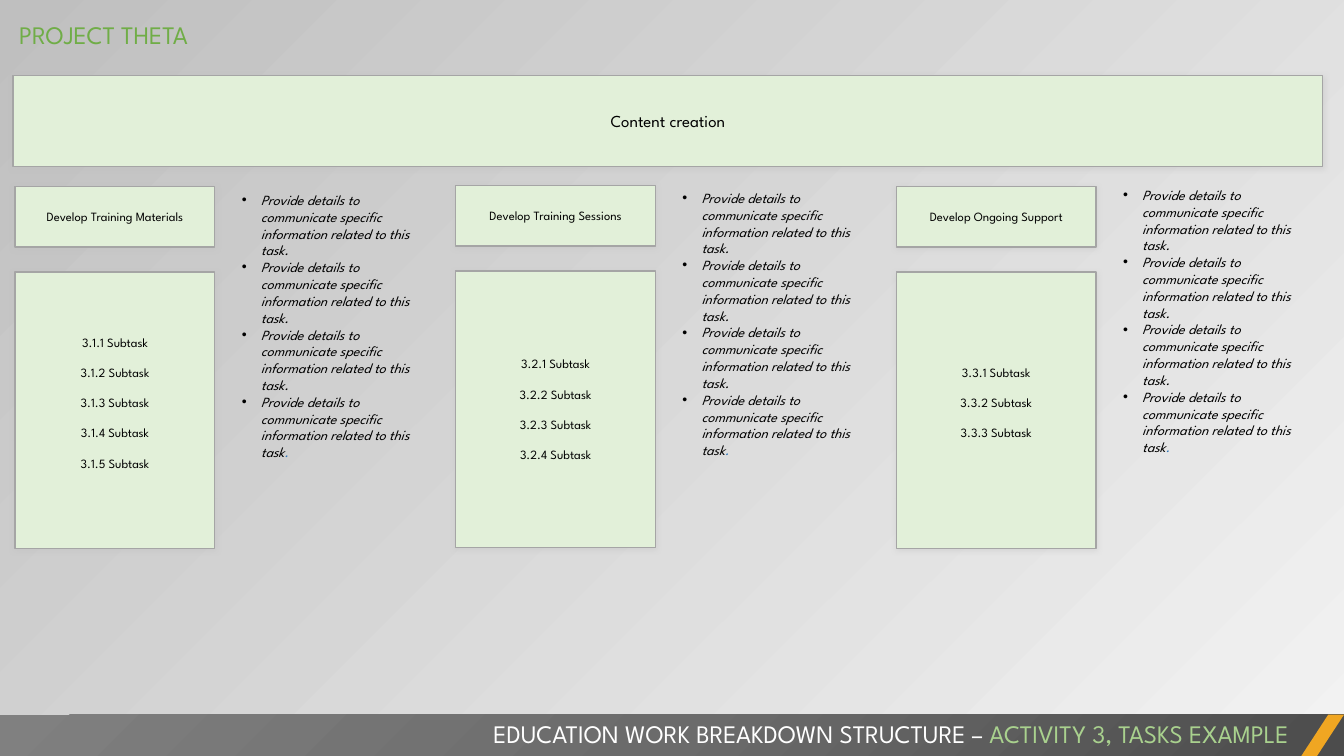
from lxml.etree import SubElement
from pptx import Presentation
from pptx.dml.color import RGBColor
from pptx.enum.shapes import MSO_SHAPE
from pptx.enum.text import MSO_ANCHOR, MSO_AUTO_SIZE, PP_ALIGN
from pptx.oxml import parse_xml
from pptx.oxml.ns import nsdecls, qn
from pptx.util import Inches, Pt

COLORS = {
    "box": "E2F0D9", "edge": "A5A5A5", "shadow": "BFBFBF", "ink": "000000",
    "title": "70AD47", "accent": "A9D18E", "white": "FFFFFF", "stop": "2E75B6",
    "slash": "F0A622", "light": "F2F2F2", "grey": "BFBFBF",
}
WIDTH, HEIGHT = 13.33, 7.5
COLUMN_LEFT, COLUMN_STEP, BOX_WIDTH = 0.15, 4.37, 1.98
DETAIL_OFFSET, DETAIL_WIDTH = 2.15, 2.06
BAR_TOP, BAR_HEIGHT = 7.09, 0.42
DETAIL = "Provide details to communicate specific information related to this task"

# Task, number of subtasks, top of the boxes, top of the details, space below subtasks
TASKS = [
    ("Develop Training Materials", 5, 1.85, 1.85, 0.2),
    ("Develop Training Sessions", 4, 1.84, 1.83, 0.05),
    ("Develop Ongoing Support", 3, 1.85, 1.8, 0.2),
]


def write(para, text, size, color, italic=False):
    span = para.add_run()
    span.text = text
    formats = {"name": "League Spartan", "size": Pt(size), "italic": italic}
    for name, value in formats.items():
        setattr(span.font, name, value)
    span.font.color.rgb = RGBColor.from_string(COLORS[color])


def add_box(page, left, top, width, height, lines, size, bottom=0.05):
    box = page.shapes.add_shape(MSO_SHAPE.RECTANGLE, *map(Inches, (left, top, width, height)))
    box.fill.solid()
    box.fill.fore_color.rgb = RGBColor.from_string(COLORS["box"])
    box.line.color.rgb = RGBColor.from_string(COLORS["edge"])
    box.line.width = Pt(1)
    box.shadow.inherit = False
    effects = box._element.spPr.find(qn("a:effectLst"))
    shadow = SubElement(effects, qn("a:outerShdw"), blurRad=str(Pt(4)), dist=str(Pt(1)),
                        dir="5400000", algn="t", rotWithShape="0")
    tint = SubElement(shadow, qn("a:srgbClr"), val=COLORS["shadow"])
    SubElement(tint, qn("a:alpha"), val="40000")
    frame = box.text_frame
    frame.word_wrap = True
    frame.vertical_anchor = MSO_ANCHOR.MIDDLE
    frame.margin_bottom = Inches(bottom)
    for index, line in enumerate(lines):
        para = frame.add_paragraph() if index else frame.paragraphs[0]
        para.alignment = PP_ALIGN.CENTER
        para.space_before = Pt(10.8 if index else 0)
        write(para, line, size, "ink")


deck = Presentation()
deck.slide_width, deck.slide_height = Inches(WIDTH), Inches(HEIGHT)
page = deck.slides.add_slide(deck.slide_layouts[5])

# Background
backdrop = page.background.fill
backdrop.gradient()
backdrop.gradient_angle = 135
for stop, color, position in zip(backdrop.gradient_stops, ("light", "grey"), (0, 1)):
    stop.color.rgb = RGBColor.from_string(COLORS[color])
    stop.position = position

# Title
title = page.shapes.title
place = {"left": 0.09, "top": 0.14, "width": 10.11, "height": 0.4}
for name, value in place.items():
    setattr(title, name, Inches(value))
frame = title.text_frame
frame.auto_size = MSO_AUTO_SIZE.NONE
frame.vertical_anchor = MSO_ANCHOR.TOP
frame.paragraphs[0].alignment = PP_ALIGN.LEFT
write(frame.paragraphs[0], "PROJECT THETA", 18, "title")

# Activity heading
add_box(page, 0.13, 0.75, 12.99, 0.9, ["Content creation"], 12)

# Task columns
for column, (task, count, top, detail_top, bottom) in enumerate(TASKS):
    left = COLUMN_LEFT + column * COLUMN_STEP
    subtasks = [f"3.{column + 1}.{number} Subtask" for number in range(1, count + 1)]
    add_box(page, left, top, BOX_WIDTH, 0.6, [task], 9)
    add_box(page, left, top + 0.85, BOX_WIDTH, 2.74, subtasks, 9, bottom)

    details = page.shapes.add_textbox(
        *map(Inches, (left + DETAIL_OFFSET, detail_top, DETAIL_WIDTH, 3)))
    frame = details.text_frame
    frame.word_wrap = True
    for index in range(4):
        para = frame.add_paragraph() if index else frame.paragraphs[0]
        write(para, DETAIL, 10, "ink", italic=True)
        write(para, ".", 10, "stop" if index == 3 else "ink", italic=True)
        props = para._p.get_or_add_pPr()
        props.set("marL", str(Inches(0.19)))
        props.set("indent", str(-Inches(0.19)))
        SubElement(props, qn("a:buFont"), typeface="Arial")
        SubElement(props, qn("a:buChar"), char="•")

# Footer bar with a slanted end
bar = page.shapes.add_shape(
    MSO_SHAPE.RECTANGLE, *map(Inches, (0, BAR_TOP, WIDTH, BAR_HEIGHT)))
slash = page.shapes.add_shape(
    MSO_SHAPE.PARALLELOGRAM, *map(Inches, (12.9, BAR_TOP, 0.43, BAR_HEIGHT)))
slash.adjustments[0] = 0.652
slash.fill.solid()
slash.fill.fore_color.rgb = RGBColor.from_string(COLORS["slash"])
for shape in (bar, slash):
    shape.line.fill.background()
    shape.shadow.inherit = False
bar._element.spPr.find(qn("a:prstGeom")).addnext(parse_xml(
    f'<a:gradFill {nsdecls("a")} rotWithShape="1"><a:gsLst>'
    '<a:gs pos="0"><a:srgbClr val="4C4C4C"/></a:gs>'
    '<a:gs pos="50000"><a:srgbClr val="6B6B6B"/></a:gs>'
    '<a:gs pos="100000"><a:srgbClr val="808080"/></a:gs></a:gsLst>'
    '<a:path path="circle"><a:fillToRect l="100000" t="100000"/></a:path></a:gradFill>'))

# Footer text
footer = page.shapes.add_textbox(*map(Inches, (2.3, 7.08, 10.58, 0.4)))
footer.text_frame.word_wrap = True
para = footer.text_frame.paragraphs[0]
para.alignment = PP_ALIGN.RIGHT
write(para, "EDUCATION WORK BREAKDOWN STRUCTURE – ", 18, "white")
write(para, "ACTIVITY 3, TASKS EXAMPLE", 18, "accent")

deck.save("out.pptx")
